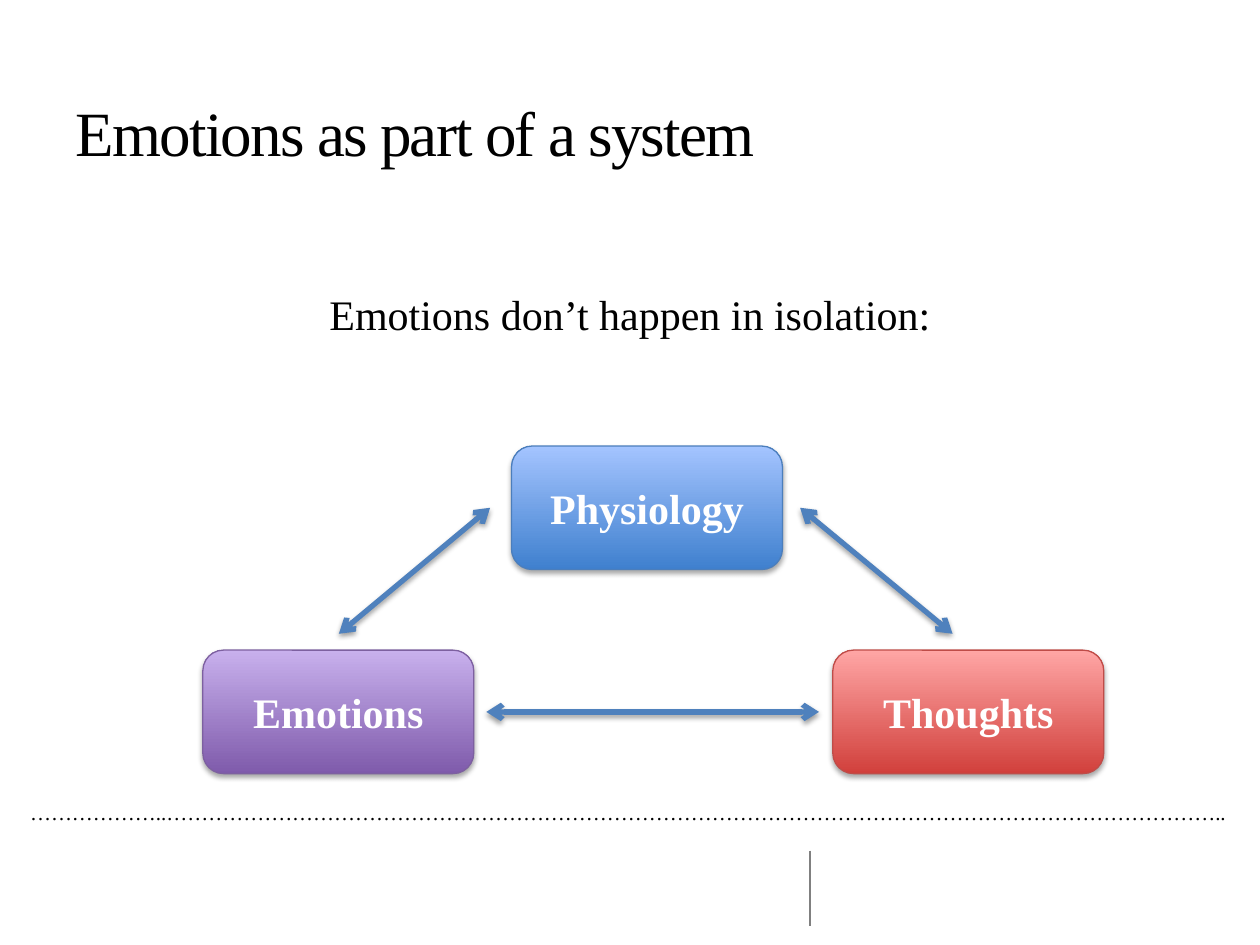
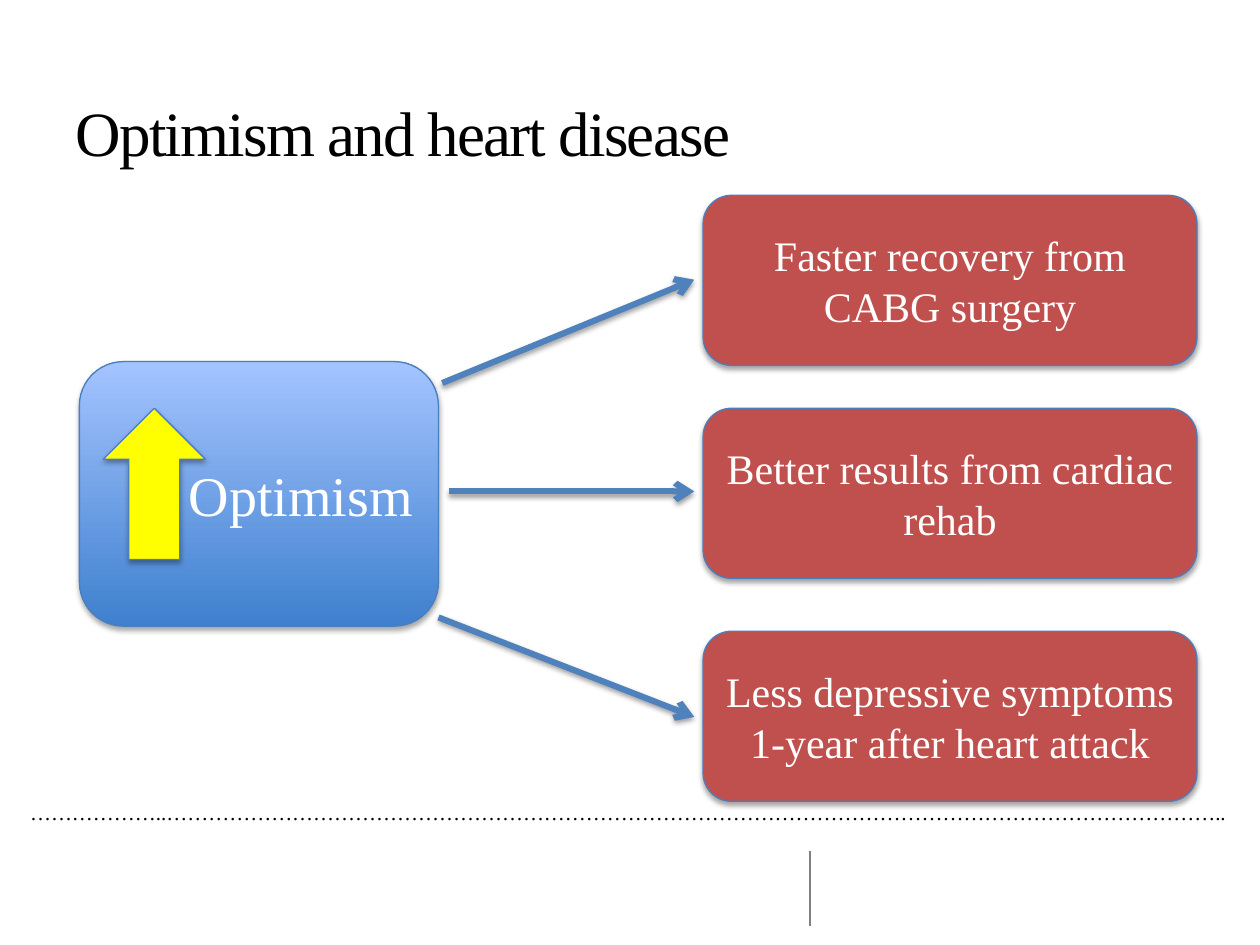
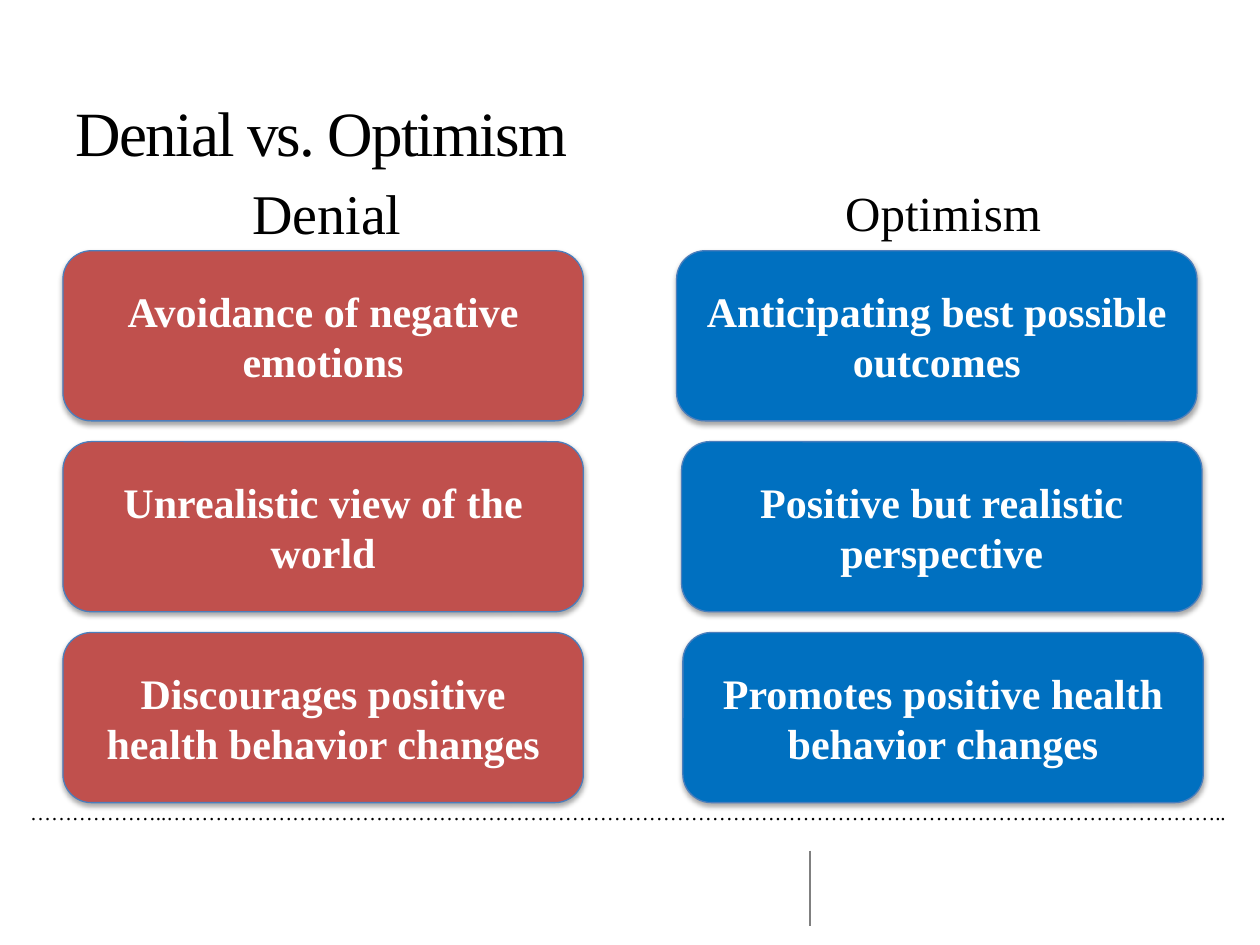
from lxml import etree
from pptx import Presentation
from pptx.dml.color import RGBColor
from pptx.enum.shapes import MSO_CONNECTOR, MSO_SHAPE
from pptx.enum.text import MSO_ANCHOR, PP_ALIGN
from pptx.oxml.ns import qn
from pptx.util import Inches, Pt

LEFT, CENTER, RIGHT = PP_ALIGN.LEFT, PP_ALIGN.CENTER, PP_ALIGN.RIGHT
MIDDLE = MSO_ANCHOR.MIDDLE
ROUNDED, UP_ARROW = MSO_SHAPE.ROUNDED_RECTANGLE, MSO_SHAPE.UP_ARROW
STRAIGHT = MSO_CONNECTOR.STRAIGHT
TITLE_ONLY = 5

FONT = "Times New Roman"
COLORS = {
    "text": "000000", "light": "FFFFFF", "divider": "808080",
    "outline": "4B7EBC", "purple outline": "7D60A0", "red outline": "BF4C48",
    "arrow": "4F81BD", "brick": "C0504D", "blue": "0070C0", "yellow": "FFFF00",
}
# Bottom and top colour of each gradient
GRADIENTS = {
    "blue": ("3F80CE", "A4C4FF"),
    "purple": ("7F5BAB", "C8B0ED"),
    "red": ("D1403C", "FFA6A5"),
}
DOTTED_RULE = "…" * 6 + ".." + "…" * 50 + ".."

# Label, left, top, gradient, outline
SYSTEM_PARTS = [
    ("Physiology", 4.06, 3.54, "blue", "outline"),
    ("Emotions", 1.61, 5.16, "purple", "purple outline"),
    ("Thoughts", 6.61, 5.16, "red", "red outline"),
]
SYSTEM_LINKS = [
    ((2.69, 5.03), (3.89, 4.03)),
    ((6.35, 4.03), (7.56, 5.03)),
    ((3.86, 5.65), (6.5, 5.65)),
]

# Outcome, top of its box, start and end of its arrow
OUTCOMES = [
    ("Faster recovery from CABG surgery", 1.55, (3.51, 3.04), (5.51, 2.22)),
    ("Better results from cardiac rehab", 3.24, (3.56, 3.9), (5.51, 3.9)),
    ("Less depressive symptoms 1-year after heart attack", 5.01,
     (3.48, 4.9), (5.51, 5.69)),
]

COMPARISON = [
    {"heading": "Denial", "heading_at": (1.04, 1.37, 3.11, 0.64), "size": 32,
     "color": "brick", "traits": [
         ("Avoidance of negative emotions", 0.5),
         ("Unrealistic view of the world", 0.5),
         ("Discourages positive health behavior changes", 0.5)]},
    {"heading": "Optimism", "heading_at": (5.93, 1.4, 3.11, 0.57), "size": 28,
     "color": "blue", "traits": [
         ("Anticipating best possible outcomes", 5.37),
         ("Positive but realistic perspective", 5.41),
         ("Promotes positive health behavior changes", 5.42)]},
]
TRAIT_TOP, TRAIT_PITCH = 1.99, 1.515


def rgb(name):
    return RGBColor.from_string(COLORS[name])


def inches(values):
    return [Inches(value) for value in values]


def set_shadow(item, opacity=None, distance=0):
    """Replace the theme shadow with a soft drop shadow, or with none."""
    effects = etree.SubElement(item._element.spPr, qn("a:effectLst"))
    if opacity is None:
        return
    shadow = etree.SubElement(
        effects, qn("a:outerShdw"), blurRad=str(Pt(3.1)),
        dist=str(Pt(distance)), dir="5400000", rotWithShape="0")
    color = etree.SubElement(shadow, qn("a:srgbClr"), val=COLORS["text"])
    etree.SubElement(color, qn("a:alpha"), val=str(opacity * 1000))


def write(frame, text, size, color="text", align=CENTER, bold=False):
    frame.word_wrap = True
    paragraph = frame.paragraphs[0]
    paragraph.alignment = align
    run = paragraph.add_run()
    run.text = text
    run.font.name, run.font.size, run.font.bold = FONT, Pt(size), bold
    run.font.color.rgb = rgb(color)
    return run


def add_text(slide, at, text, size, align=CENTER):
    frame = slide.shapes.add_textbox(*inches(at)).text_frame
    write(frame, text, size, align=align)
    return frame


def add_line(slide, start, end, color, width):
    line = slide.shapes.add_connector(STRAIGHT, *inches(start + end))
    line.line.color.rgb = rgb(color)
    line.line.width = Pt(width)
    return line


def add_arrow(slide, start, end, width, ends=("tailEnd",)):
    arrow = add_line(slide, start, end, "arrow", width)
    outline = arrow.line._get_or_add_ln()
    for tip in ends:
        etree.SubElement(outline, qn(f"a:{tip}"), type="arrow")
    set_shadow(arrow, 38, 1.6)


def add_box(slide, at, fill=None, gradient=None, outline="outline",
            kind=ROUNDED):
    box = slide.shapes.add_shape(kind, *inches(at))
    if gradient:
        box.fill.gradient()
        box.fill.gradient_angle = 90
        for stop, color in zip(box.fill.gradient_stops, GRADIENTS[gradient]):
            stop.color.rgb = RGBColor.from_string(color)
    else:
        box.fill.solid()
        box.fill.fore_color.rgb = rgb(fill)
    box.line.color.rgb = rgb(outline)
    box.line.width = Pt(0.75)
    set_shadow(box, 35, 1.8)
    box.text_frame.vertical_anchor = MIDDLE
    return box.text_frame


def new_slide(deck, heading):
    """Add a slide with its title, dotted rule and footer divider."""
    slide = deck.slides.add_slide(deck.slide_layouts[TITLE_ONLY])
    rule = add_text(slide, (0.14, 6.3, 9.72, 0.3), DOTTED_RULE, 12, LEFT)
    rule.word_wrap = False
    set_shadow(add_line(slide, (6.43, 6.75), (6.43, 7.35), "divider", 1))
    title = slide.shapes.title
    title.left, title.top, title.width, title.height = inches((0.5, 0.3, 9, 1.25))
    title.text_frame.vertical_anchor = MIDDLE
    run = write(title.text_frame, heading, 36, align=LEFT)
    run.font._element.set("spc", "-100")
    title.text_frame.paragraphs[0].line_spacing = Pt(60)
    return slide


def build_system(deck):
    slide = new_slide(deck, "Emotions as part of a system")
    add_text(slide, (0.5, 2.24, 9, 0.8),
             "Emotions don’t happen in isolation:", 24)
    for label, left, top, gradient, outline in SYSTEM_PARTS:
        frame = add_box(slide, (left, top, 2.15, 0.98), gradient=gradient,
                        outline=outline)
        write(frame, label, 24, "light", bold=True)
    for start, end in SYSTEM_LINKS:
        add_arrow(slide, start, end, 3, ("headEnd", "tailEnd"))


def build_heart_disease(deck):
    slide = new_slide(deck, "Optimism and heart disease")
    cause = add_box(slide, (0.63, 2.87, 2.85, 2.1), gradient="blue")
    write(cause, "Optimism", 32, "light", RIGHT)
    add_box(slide, (0.82, 3.24, 0.81, 1.2), "yellow", kind=UP_ARROW)
    for outcome, top, start, end in OUTCOMES:
        frame = add_box(slide, (5.58, top, 3.92, 1.35), "brick")
        write(frame, outcome, 24, "light")
        add_arrow(slide, start, end, 3.5)


def build_comparison(deck):
    slide = new_slide(deck, "Denial vs. Optimism")
    for column in COMPARISON:
        add_text(slide, column["heading_at"], column["heading"], column["size"])
        for row, (trait, left) in enumerate(column["traits"]):
            top = TRAIT_TOP + row * TRAIT_PITCH
            frame = add_box(slide, (left, top, 4.13, 1.35), column["color"])
            write(frame, trait, 24, "light", bold=True)


def main():
    deck = Presentation()
    deck.slide_width, deck.slide_height = Inches(10), Inches(7.5)
    build_system(deck)
    build_heart_disease(deck)
    build_comparison(deck)
    deck.save("out.pptx")


if __name__ == "__main__":
    main()
